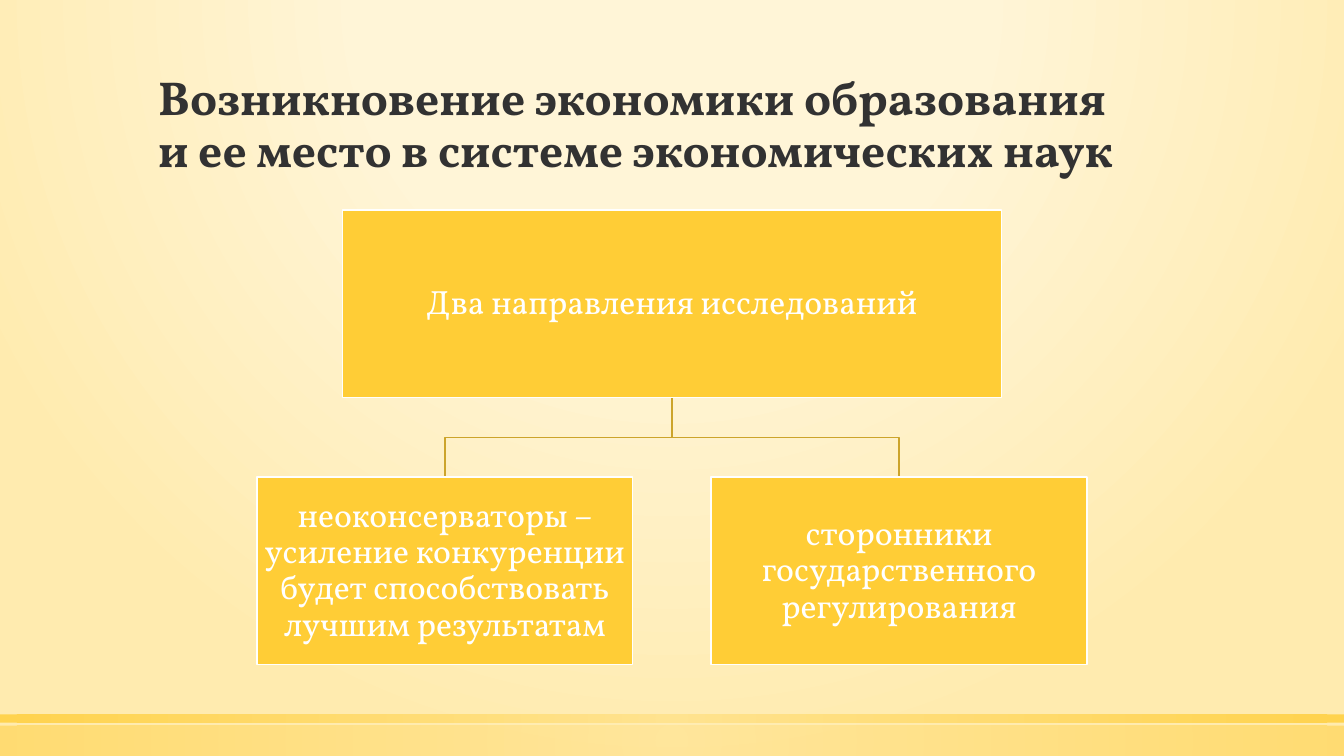
from lxml import etree
from pptx import Presentation
from pptx.dml.color import RGBColor
from pptx.enum.shapes import MSO_SHAPE
from pptx.enum.text import MSO_ANCHOR, PP_ALIGN
from pptx.oxml.ns import qn
from pptx.util import Inches, Pt

RECT = MSO_SHAPE.RECTANGLE
MIDDLE, BOTTOM = MSO_ANCHOR.MIDDLE, MSO_ANCHOR.BOTTOM
LEFT, CENTER = PP_ALIGN.LEFT, PP_ALIGN.CENTER

WIDE, HIGH = Inches(13.33), Inches(7.5)
FONT = "Vollkorn"
GOLD, DARK_GOLD, WHITE, INK = "FFCD36", "CCA42B", "FFFFFF", "323232"

# Chart rows and columns, in percent of the slide
ROOT_TOP, LEAF_TOP, NODE_HIGH = 27.77, 63.09, 24.85
ROOT_WIDE, LEAF_WIDE = 49.05, 27.97
MID, SIDE = 50, 16.9
LEAVES = [
    (MID - SIDE, "неоконсерваторы –усиление конкуренции будет способствовать лучшим результатам"),
    (MID + SIDE, "сторонники государственного регулирования"),
]


def px(share):
    return round(WIDE * share / 100)


def py(share):
    return round(HIGH * share / 100)


def color(code):
    return RGBColor.from_string(code)


def radial(fill, owner, stops, focus):
    """Turn a fill into a circular gradient; stops are (place, colour, opacity)."""
    fill.gradient()
    grad = owner.find(".//" + qn("a:gradFill"))
    for child in list(grad):
        grad.remove(child)
    stop_list = etree.SubElement(grad, qn("a:gsLst"))
    for place, code, alpha in stops:
        stop = etree.SubElement(stop_list, qn("a:gs"), pos=str(place * 1000))
        tint = etree.SubElement(stop, qn("a:srgbClr"), val=code)
        if alpha < 100:
            etree.SubElement(tint, qn("a:alpha"), val=str(alpha * 1000))
    way = etree.SubElement(grad, qn("a:path"), path="circle")
    sides = {side: str(share * 1000) for side, share in zip("ltrb", focus)}
    etree.SubElement(way, qn("a:fillToRect"), **sides)


def add_band(slide, top, high, alpha):
    band = slide.shapes.add_shape(RECT, 0, py(top), WIDE, py(high))
    band.shadow.inherit = False
    band.line.fill.background()
    stops = [(0, "FFE186", alpha), (100, GOLD, alpha)]
    radial(band.fill, band.element, stops, (50, 50, 50, 50))


def write(shape, text, size, code, align, anchor, inset, bold=False):
    frame = shape.text_frame
    frame.word_wrap = True
    frame.vertical_anchor = anchor
    frame.margin_left = frame.margin_right = inset
    frame.margin_top = frame.margin_bottom = inset
    frame.text = text
    para = frame.paragraphs[0]
    para.alignment = align
    para.line_spacing = 0.9
    font = para.font
    font.name, font.size, font.bold = FONT, Pt(size), bold
    font.color.rgb = color(code)


def add_title(slide, text):
    box = slide.shapes.add_textbox(px(11.03), py(6.8), px(78), py(18))
    write(box, text, 34, INK, LEFT, BOTTOM, Inches(0.1), bold=True)


def add_node(slide, mid, top, wide, text):
    node = slide.shapes.add_shape(
        RECT, px(mid - wide / 2), py(top), px(wide), py(NODE_HIGH))
    node.shadow.inherit = False
    node.fill.solid()
    node.fill.fore_color.rgb = color(GOLD)
    node.line.color.rgb = color(WHITE)
    node.line.width = Pt(1)
    write(node, text, 24, WHITE, CENTER, MIDDLE, Inches(0.02))


def add_branch(slide, mid):
    start = ROOT_TOP + NODE_HIGH
    bend = (start + LEAF_TOP) / 2
    path = slide.shapes.build_freeform(px(MID), py(start))
    path.add_line_segments(
        [(px(MID), py(bend)), (px(mid), py(bend)), (px(mid), py(LEAF_TOP))],
        close=False)
    branch = path.convert_to_shape()
    branch.shadow.inherit = False
    branch.fill.background()
    branch.line.color.rgb = color(DARK_GOLD)
    branch.line.width = Pt(1)


def main():
    deck = Presentation()
    deck.slide_width, deck.slide_height = WIDE, HIGH
    slide = deck.slides.add_slide(deck.slide_layouts[6])

    # Backdrop and footer bands
    glow = [(0, "FFF5D7", 100), (40, "FFF5D7", 100), (100, "FFEBAF", 100)]
    radial(slide.background.fill, slide.element, glow, (50, -80, 50, 180))
    add_band(slide, 96, 4, 50)
    add_band(slide, 94.5, 1.1, 80)

    add_title(slide, "Возникновение экономики образования\v"
                     "и ее место в системе экономических наук")

    # Hierarchy: branches behind the boxes
    for mid, _ in LEAVES:
        add_branch(slide, mid)
    add_node(slide, MID, ROOT_TOP, ROOT_WIDE, "Два направления исследований")
    for mid, text in LEAVES:
        add_node(slide, mid, LEAF_TOP, LEAF_WIDE, text)

    deck.save("out.pptx")


if __name__ == "__main__":
    main()
